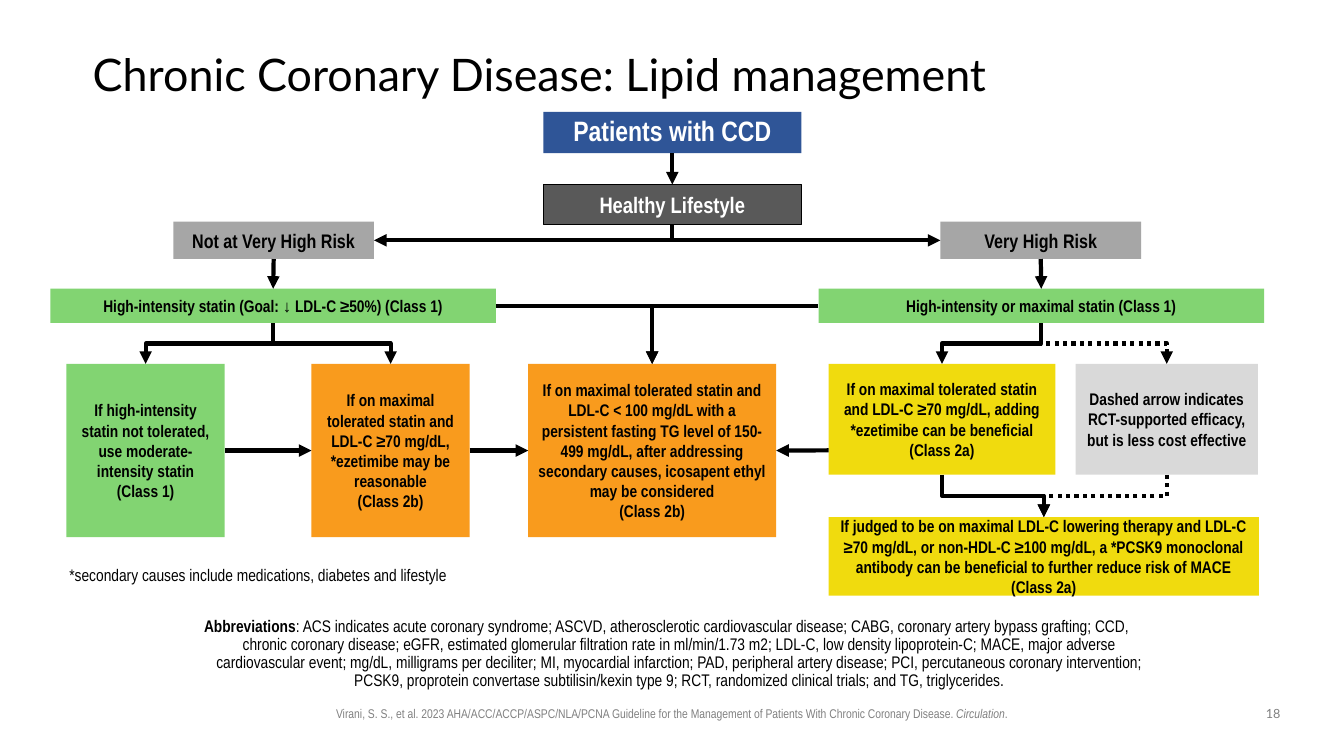
"""Builds a one-slide flowchart on lipid management in chronic coronary disease."""
from lxml import etree
from pptx import Presentation
from pptx.dml.color import RGBColor
from pptx.enum.dml import MSO_LINE
from pptx.enum.shapes import MSO_CONNECTOR, MSO_SHAPE
from pptx.enum.text import MSO_ANCHOR, PP_ALIGN
from pptx.oxml.ns import qn
from pptx.util import Inches, Pt

RECTANGLE = MSO_SHAPE.RECTANGLE
STRAIGHT, ELBOW = MSO_CONNECTOR.STRAIGHT, MSO_CONNECTOR.ELBOW
DOTTED = MSO_LINE.ROUND_DOT
LEFT, CENTER = PP_ALIGN.LEFT, PP_ALIGN.CENTER
TOP, MIDDLE = MSO_ANCHOR.TOP, MSO_ANCHOR.MIDDLE
COLUMNS, ROWS, CELL = 133.33, 75, 0.1
COLORS = {
    "black": "000000", "white": "FFFFFF", "blue": "2F5597", "charcoal": "595959",
    "gray": "A6A6A6", "light": "D9D9D9", "green": "82D472", "orange": "F99B1D",
    "yellow": "F0DB0E", "footer": "808080",
}


def color(name):
    return RGBColor.from_string(COLORS[name])


def cells(count):
    return Inches(count * CELL)


def write(para, text, size=12, font="Arial Narrow", ink="black", bold=False, italic=False):
    span = para.add_run()
    span.text = text
    span.font.size, span.font.name = Pt(size), font
    span.font.bold, span.font.italic = bold, italic
    span.font.color.rgb = color(ink)


def side(box, across, down):
    return box.left + round(box.width * across), box.top + round(box.height * down)


def top(box):
    return side(box, 0.5, 0)


def bottom(box):
    return side(box, 0.5, 1)


def left(box):
    return side(box, 0, 0.5)


def right(box):
    return side(box, 1, 0.5)


class Flowchart:
    def __init__(self, deck):
        self.page = deck.slides.add_slide(deck.slide_layouts[6])
        self.line_width = Pt(3)

    def fill_text(self, box, paragraphs, align, anchor, spacing=None, insets=None, **style):
        frame = box.text_frame
        frame.word_wrap, frame.vertical_anchor = True, anchor
        if insets:
            (frame.margin_left, frame.margin_top,
             frame.margin_right, frame.margin_bottom) = map(cells, insets)
        for index, spans in enumerate(paragraphs):
            para = frame.add_paragraph() if index else frame.paragraphs[0]
            para.alignment, para.line_spacing = align, spacing
            for text, changes in spans:
                write(para, text, **{**style, **changes})

    def text(self, place, *spans, align=CENTER, anchor=TOP, **style):
        box = self.page.shapes.add_textbox(*map(cells, place))
        self.fill_text(box, [spans], align, anchor, **style)
        return box

    def box(self, place, fill, *lines, outline=None, **style):
        box = self.page.shapes.add_shape(RECTANGLE, *map(cells, place))
        box.shadow.inherit = False
        box.fill.solid()
        box.fill.fore_color.rgb = color(fill)
        if outline:
            box.line.color.rgb, box.line.width = color(outline), Pt(1)
        else:
            box.line.fill.background()
        paragraphs = [[(line, {})] for line in lines]
        self.fill_text(box, paragraphs, CENTER, MIDDLE, bold=True, **style)
        return box

    def arrow(self, start, end, kind=STRAIGHT, dash=None):
        connector = self.page.shapes.add_connector(kind, *start, *end)
        connector.line.color.rgb = color("black")
        connector.line.width = self.line_width
        if dash:
            connector.line.dash_style = dash
        properties = connector._element.spPr
        etree.SubElement(properties.find(qn("a:ln")), qn("a:tailEnd"), type="triangle")
        etree.SubElement(properties, qn("a:effectLst"))
        return properties

    def corner(self, start, end):
        properties = self.arrow(start, end, ELBOW)
        properties.find(qn("a:prstGeom")).set("prst", "bentConnector2")

    def drop(self, start, end, bends=2, dash=None):
        half_run, half_fall = abs(end[0] - start[0]) // 2, abs(end[1] - start[1]) // 2
        x, y = (start[0] + end[0]) // 2, (start[1] + end[1]) // 2
        properties = self.arrow((x - half_fall, y - half_run),
                                (x + half_fall, y + half_run), ELBOW, dash)
        properties.find(qn("a:prstGeom")).set("prst", f"bentConnector{bends + 1}")
        frame = properties.find(qn("a:xfrm"))
        rightward = end[0] > start[0]
        frame.set("rot", str((270 if rightward else 90) * 60000))
        if rightward:
            frame.set("flipH", "1")


def add_texts(chart):
    chart.text((9.2, 4, 107.9, 7.2), ("Chronic Coronary Disease: Lipid management", {}),
               align=LEFT, anchor=MIDDLE, size=32, font="Lato", spacing=0.9,
               insets=(0, 0, 0, 0))
    chart.text((5.9, 55.5, 66.7, 3),
               ("*secondary causes include medications, diabetes and lifestyle", {}), align=LEFT)
    glossary = chart.text(
        (18.2, 60.8, 96.9, 7.8), ("Abbreviations", {"bold": True}),
        (": ACS indicates acute coronary syndrome; ASCVD, atherosclerotic cardiovascular "
         "disease; CABG, coronary artery bypass grafting; CCD, chronic coronary disease; "
         "eGFR, estimated glomerular filtration rate in ml/min/1.73 m2; LDL-C, low density "
         "lipoprotein-C; MACE, major adverse cardiovascular event; mg/dL, milligrams per "
         "deciliter; MI, myocardial infarction; PAD, peripheral artery disease; PCI, "
         "percutaneous coronary intervention; PCSK9, proprotein convertase subtilisin/kexin "
         "type 9; RCT, randomized clinical trials; and TG, triglycerides.", {}),
        spacing=0.9, insets=(0, 0.5, 1, 0.5))
    indent = glossary.text_frame.paragraphs[0]._p.get_or_add_pPr()
    indent.set("marL", str(cells(2.5)))
    indent.set("indent", str(cells(-2.5)))
    chart.text((29.4, 69.5, 74.5, 2.5),
               ("Virani, S. S., et al. 2023 AHA/ACC/ACCP/ASPC/NLA/PCNA Guideline for the "
                "Management of Patients With Chronic Coronary Disease. ", {}),
               ("Circulation", {"italic": True}), (".", {}), size=9, ink="footer")
    chart.text((124.2, 69.5, 4.2, 2.6), ("18", {}), size=9, font="Lato", ink="footer")


def add_flow(chart):
    patients = chart.box((53.9, 11.1, 25.6, 4.1), "blue", "Patients with CCD", size=20,
                         ink="white", spacing=0.9, insets=(0, 0, 0, 0))
    lifestyle = chart.box((53.9, 18.3, 25.6, 4), "charcoal", "Healthy Lifestyle",
                          size=16, ink="white", outline="black")
    lower, higher = [
        chart.box((x, 22, 19.9, 3.7), "gray", label, size=14)
        for x, label in ((17.2, "Not at Very High Risk"), (93.3, "Very High Risk"))]
    lower_statin, higher_statin = [
        chart.box((x, 28.65, 44.2, 3.4), "green", label) for x, label in (
            (5, "High-intensity statin (Goal: ↓ LDL-C ≥50%) (Class 1)"),
            (81.2, "High-intensity or maximal statin (Class 1)"))]
    moderate, ezetimibe, icosapent = [
        chart.box((x, 36.1, width, 17.2), fill, *lines) for x, width, fill, *lines in (
            (6.6, 15.7, "green", "If high-intensity statin not tolerated, use "
             "moderate-intensity statin", "(Class 1)"),
            (30.9, 15.7, "orange", "If on maximal tolerated statin and LDL-C ≥70 mg/dL, "
             "*ezetimibe may be reasonable", "(Class 2b)"),
            (52.4, 24.6, "orange", "If on maximal tolerated statin and LDL-C < 100 mg/dL "
             "with a persistent fasting TG level of 150-499 mg/dL, after addressing "
             "secondary causes, icosapent ethyl may be considered", "(Class 2b)"))]
    adding = chart.box((82.2, 36.1, 22.5, 11), "yellow", "If on maximal tolerated statin and "
                       "LDL-C ≥70 mg/dL, adding *ezetimibe can be beneficial", "(Class 2a)")
    legend = chart.box((106.7, 36.1, 18.1, 11), "light", "Dashed arrow indicates "
                       "RCT-supported efficacy, but is less cost effective")
    antibody = chart.box((82.2, 51.3, 42.7, 7.8), "yellow", "If judged to be on maximal LDL-C "
                         "lowering therapy and LDL-C ≥70 mg/dL, or non-HDL-C ≥100 mg/dL, a "
                         "*PCSK9 monoclonal antibody can be beneficial to further reduce "
                         "risk of MACE (Class 2a)")

    for start, end in ((bottom(patients), top(lifestyle)), (bottom(lower), top(lower_statin)),
                       (bottom(higher), top(higher_statin)), (right(moderate), left(ezetimibe)),
                       (right(ezetimibe), left(icosapent)),
                       (side(adding, 0, 0.78), right(icosapent))):
        chart.arrow(start, end)
    for start in (right(lower_statin), left(higher_statin)):
        chart.corner(start, top(icosapent))
    for end in (right(lower), left(higher)):
        chart.drop(bottom(lifestyle), end, bends=1)
    for start, end, dash in ((lower_statin, moderate, None), (lower_statin, ezetimibe, None),
                             (higher_statin, legend, DOTTED), (higher_statin, adding, None),
                             (legend, antibody, DOTTED), (adding, antibody, None)):
        chart.drop(bottom(start), top(end), dash=dash)


def main():
    deck = Presentation()
    deck.slide_width, deck.slide_height = cells(COLUMNS), cells(ROWS)
    chart = Flowchart(deck)
    add_texts(chart)
    add_flow(chart)
    deck.save("out.pptx")


if __name__ == "__main__":
    main()
